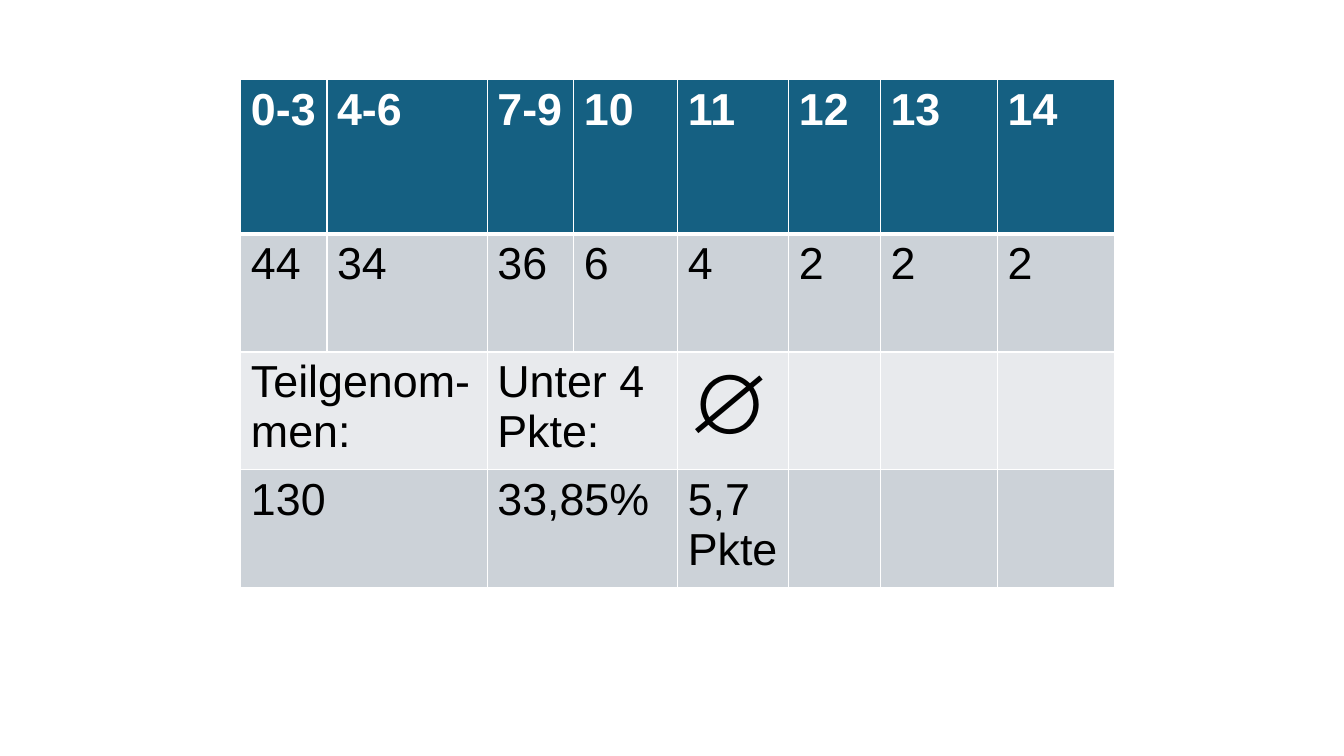
from lxml.etree import SubElement
from pptx import Presentation
from pptx.dml.color import RGBColor
from pptx.oxml.ns import qn
from pptx.util import Cm, Pt

HEADER_FILL, DARK_BAND, LIGHT_BAND = "156082", "CCD2D8", "E8EAED"
WHITE, BLACK = "FFFFFF", "000000"

COLUMN_WIDTHS = [2.17, 4.04, 2.18, 2.62, 2.8, 2.31, 2.95, 2.95]
ROW_HEIGHTS = [3.89, 2.97, 2.97, 2.97]
RESULTS = [
    ["0-3", "4-6", "7-9", "10", "11", "12", "13", "14"],
    ["44", "34", "36", "6", "4", "2", "2", "2"],
    ["Teilgenom-men:", "", "Unter 4 Pkte:", "", "∅", "", "", ""],
    ["130", "", "33,85%", "", "5,7 Pkte", "", "", ""],
]


def color(value):
    return RGBColor.from_string(value)


class SlideBuilder:
    font_name = "Arial"
    font_size = 32
    symbol_size = 60

    def __init__(self, slide):
        self.slide = slide

    def border(self, cell, side, width):
        line = SubElement(cell._tc.get_or_add_tcPr(), qn(f"a:ln{side}"), w=str(Pt(width)))
        fill = SubElement(line, qn("a:solidFill"))
        SubElement(fill, qn("a:srgbClr"), val=WHITE)

    def cell(self, cell, text, fill, text_color, bold, size, top=1, bottom=1):
        for side, width in zip("LRTB", (1, 1, top, bottom)):
            self.border(cell, side, width)
        cell.fill.solid()
        cell.fill.fore_color.rgb = color(fill)
        cell.text = text
        font = cell.text_frame.paragraphs[0].font
        font.name = self.font_name
        font.size = Pt(size)
        font.bold = bold
        font.color.rgb = color(text_color)

    def table(self, left, top, widths, heights, rows):
        frame = self.slide.shapes.add_table(
            len(rows), len(widths), Cm(left), Cm(top), Cm(sum(widths)), Cm(sum(heights))
        )
        table = frame.table
        for column, width in zip(table.columns, widths):
            column.width = Cm(width)
        for row, height in zip(table.rows, heights):
            row.height = Cm(height)
        for r, texts in enumerate(rows):
            header = r == 0
            fill = HEADER_FILL if header else DARK_BAND if r % 2 else LIGHT_BAND
            for c, text in enumerate(texts):
                symbol = text == "∅"
                self.cell(
                    table.cell(r, c), text, fill,
                    WHITE if header else BLACK,
                    header or symbol,
                    self.symbol_size if symbol else self.font_size,
                    top=3 if r == 1 else 1,
                    bottom=3 if header else 1,
                )
        return table


def main():
    presentation = Presentation()
    presentation.slide_width = Cm(33.87)
    presentation.slide_height = Cm(19.05)
    builder = SlideBuilder(presentation.slides.add_slide(presentation.slide_layouts[6]))

    results = builder.table(6.07, 2.01, COLUMN_WIDTHS, ROW_HEIGHTS, RESULTS)
    for row in (2, 3):
        for first in (0, 2):
            results.cell(row, first).merge(results.cell(row, first + 1))

    presentation.save("out.pptx")


if __name__ == "__main__":
    main()
